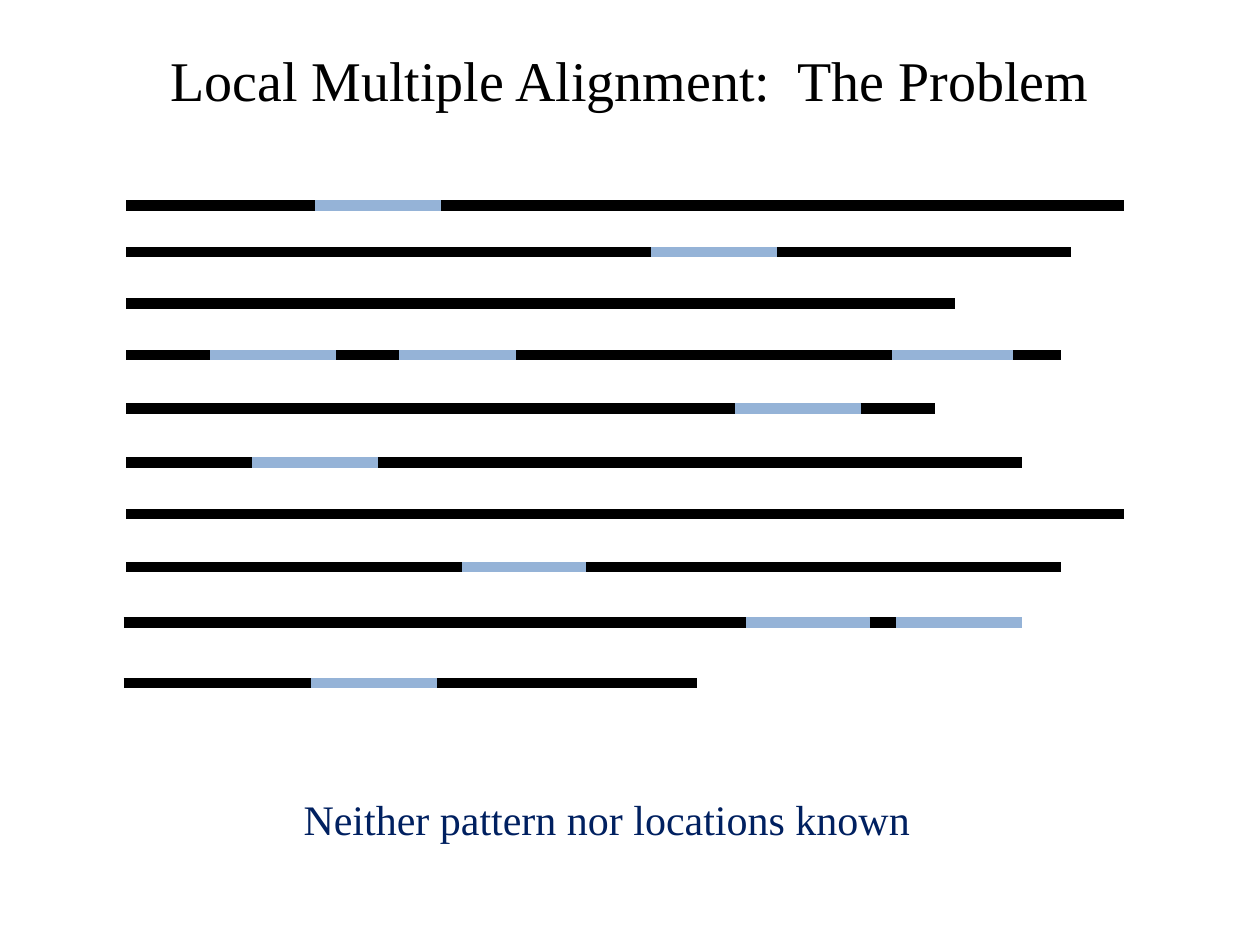
from itertools import cycle, pairwise

from pptx import Presentation
from pptx.dml.color import RGBColor
from pptx.enum.shapes import MSO_CONNECTOR
from pptx.enum.text import MSO_ANCHOR, PP_ALIGN
from pptx.oxml.ns import qn
from pptx.util import Cm, Pt
from lxml.etree import SubElement

BLACK = RGBColor(0x00, 0x00, 0x00)
MOTIF_BLUE = RGBColor(0x95, 0xB3, 0xD7)
NAVY = RGBColor(0x00, 0x20, 0x60)
FONT = "Times New Roman"

# Row offset from the top, then the boundaries between background and motif
# stretches; each row starts with background. All in centimetres.
SEQUENCES = [
    (0, [0, 3.81, 6.35, 20.12]),
    (0.94, [0, 10.59, 13.13, 19.05]),
    (1.98, [0, 16.71]),
    (3.02, [0, 1.7, 4.24, 5.51, 7.87, 15.44, 17.88, 18.85]),
    (4.09, [0, 12.27, 14.81, 16.31]),
    (5.18, [0, 2.54, 5.08, 18.06]),
    (6.22, [0, 20.12]),
    (7.29, [0, 6.78, 9.27, 18.85]),
    (8.41, [-0.05, 12.5, 14.99, 15.52, 18.06]),
    (9.63, [-0.05, 3.73, 6.27, 11.51]),
]


def add_text(page, box, text, size, color, align, anchor, wrap):
    """Place one line of text in box (left, top, width, height in cm)."""
    frame = page.shapes.add_textbox(*map(Cm, box)).text_frame
    frame.word_wrap = wrap
    frame.vertical_anchor = anchor
    frame.text = text
    para = frame.paragraphs[0]
    para.alignment = align
    font = para.runs[0].font
    font.name, font.size = FONT, Pt(size)
    font.color.rgb = color


def add_segment(page, start, end, y, color):
    segment = page.shapes.add_connector(
        MSO_CONNECTOR.STRAIGHT, Cm(start), Cm(y), Cm(end), Cm(y))
    segment.line.color.rgb = color
    segment.line.width = Pt(6)
    SubElement(segment._element.spPr, qn("a:effectLst"))


def add_sequences(page, left, top):
    for offset, boundaries in SEQUENCES:
        colors = cycle([BLACK, MOTIF_BLUE])
        for (start, end), color in zip(pairwise(boundaries), colors):
            add_segment(page, left + start, left + end, top + offset, color)


def main():
    deck = Presentation()
    deck.slide_width, deck.slide_height = Cm(25.4), Cm(19.05)
    page = deck.slides.add_slide(deck.slide_layouts[6])
    add_text(page, (1.27, 0.64, 22.86, 1.9),
             "Local Multiple Alignment:  The Problem",
             32, BLACK, PP_ALIGN.CENTER, MSO_ANCHOR.MIDDLE, True)
    add_sequences(page, 2.54, 4.14)
    add_text(page, (5.87, 15.88, 13.16, 1.27),
             "Neither pattern nor locations known",
             24, NAVY, PP_ALIGN.LEFT, MSO_ANCHOR.TOP, True)
    deck.save("out.pptx")


if __name__ == "__main__":
    main()
